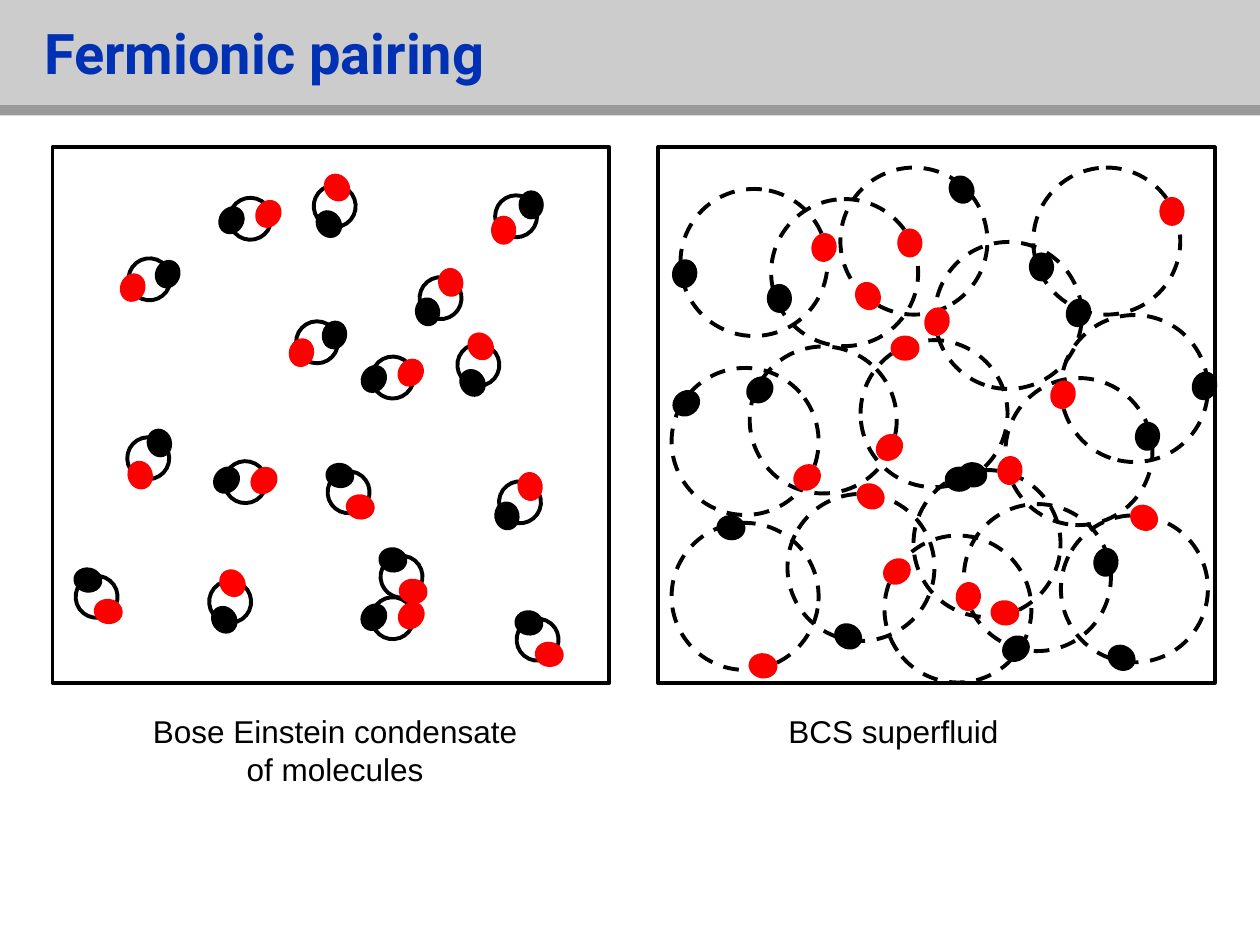
from dataclasses import dataclass
from math import cos, radians, sin

from pptx import Presentation, util as u
from pptx.dml.color import RGBColor
from pptx.enum import dml, shapes, text

COLORS = {"black": "000000", "red": "FF0000", "blue": "0031B5",
          "band": "CCCCCC", "rule": "999999"}
COLUMNS, ROWS = 100, 75
DOT = (2.3, 2)


@dataclass
class PairStyle:
    """Ring diameter and dot offsets from its centre before turning."""
    diameter: float
    red: tuple
    black: tuple
    dashed: bool


MOLECULE = PairStyle(3.33, (-1.1, -1), (0.9, 1.2), False)
COOPER_PAIR = PairStyle(11.67, (-2.3, -5.2), (2, 5.2), True)

# Ring column, ring row, turn in degrees
COOPER_PAIRS = [
    (68.3, 27, 0), (61.2, 15.8, 89.4), (59.5, 27.5, 136.4),
    (53.3, 41.5, 189.4), (66.7, 13.3, 243.8), (76.5, 40, 278.5),
    (74.2, 19.2, 288.9), (70.2, 42.5, 325.4), (53.3, 29.2, 144),
    (54, 15, 101.8), (62.5, 39.2, 31.6), (82, 13.3, 89.4),
    (72.5, 37.3, 189.4), (79.8, 30, 278.5), (84.2, 25, 288.9),
    (84.2, 40.9, 31.6),
]
MOLECULES = [
    (29.5, 47.4, 129.7), (29.5, 28.3, 122.5), (26, 37.4, 189.4),
    (39.3, 15.5, 269.7), (10.2, 20.5, 291.2), (39.6, 38.2, 80.5),
    (17.8, 36.6, 132.9), (23.5, 25.5, 284.1), (30.2, 44.1, 189.4),
    (10.1, 34.7, 253.1), (41, 49.1, 189.4), (6, 45.7, 189.4),
    (36.3, 27.3, 54.8), (18.2, 15.7, 122.5), (33.3, 22, 80.5),
    (24.9, 14.7, 54.8), (16.6, 46.1, 54.8),
]


class SlideBuilder:
    def __init__(self, presentation):
        self.column = presentation.slide_width / COLUMNS
        self.row = presentation.slide_height / ROWS
        self.slide = presentation.slides.add_slide(presentation.slide_layouts[5])

    def place(self, left, top, width, height):
        return (u.Emu(round(left * self.column)), u.Emu(round(top * self.row)),
                u.Emu(round(width * self.column)), u.Emu(round(height * self.row)))

    def shape(self, kind, box, fill=None, line=None, dashed=False, turn=0):
        shape = self.slide.shapes.add_shape(kind, *self.place(*box))
        shape.shadow.inherit = False
        shape.rotation = turn
        if fill:
            shape.fill.solid()
            shape.fill.fore_color.rgb = RGBColor.from_string(COLORS[fill])
        else:
            shape.fill.background()
        if line:
            shape.line.color.rgb = RGBColor.from_string(COLORS[line])
            shape.line.width = u.Pt(2.25)
            if dashed:
                shape.line.dash_style = dml.MSO_LINE.DASH
        else:
            shape.line.fill.background()

    def rectangle(self, *box, **look):
        self.shape(shapes.MSO_SHAPE.RECTANGLE, box, **look)

    def ellipse(self, x, y, width, height, **look):
        """Draw an ellipse centred on x, y."""
        box = (x - width / 2, y - height / 2, width, height)
        self.shape(shapes.MSO_SHAPE.OVAL, box, **look)

    def pair(self, style, left, top, turn):
        """Draw a ring and its two dots, turned about the ring's centre."""
        x, y = left + style.diameter / 2, top + style.diameter / 2
        self.ellipse(x, y, style.diameter, style.diameter,
                     line="black", dashed=style.dashed, turn=turn)
        c, s = cos(radians(turn)), sin(radians(turn))
        for color, (dx, dy) in (("red", style.red), ("black", style.black)):
            self.ellipse(x + dx * c - dy * s, y + dx * s + dy * c, *DOT,
                         fill=color, turn=turn)

    def fill_text(self, frame, words, color, alignment, anchor, **font):
        frame.word_wrap = True
        frame.auto_size = text.MSO_AUTO_SIZE.NONE
        frame.vertical_anchor = anchor
        paragraph = frame.paragraphs[0]
        paragraph.text = words
        paragraph.alignment = alignment
        for name, value in font.items():
            setattr(paragraph.font, name, value)
        paragraph.font.color.rgb = RGBColor.from_string(COLORS[color])

    def title(self, words, *box):
        title = self.slide.shapes.title
        title.left, title.top, title.width, title.height = self.place(*box)
        self.slide.shapes._spTree.append(title._element)  # above the band
        self.fill_text(title.text_frame, words, "blue", text.PP_ALIGN.LEFT,
                       text.MSO_ANCHOR.MIDDLE, name="Roboto", size=u.Pt(32), bold=True)

    def caption(self, words, *box, alignment=text.PP_ALIGN.LEFT):
        caption = self.slide.shapes.add_textbox(*self.place(*box))
        self.fill_text(caption.text_frame, words, "black", alignment,
                       text.MSO_ANCHOR.TOP, name="Arial", size=u.Pt(18))


def main():
    presentation = Presentation()
    presentation.slide_width, presentation.slide_height = u.Inches(10), u.Inches(7.5)
    builder = SlideBuilder(presentation)

    builder.rectangle(0, 7.5, COLUMNS, 1.67, fill="rule")
    builder.rectangle(0, 0, COLUMNS, 8.33, fill="band")
    builder.title("Fermionic pairing", 2.5, 0, 90, 8.33)

    for left in (4.17, 52.2):
        builder.rectangle(left, 11.7, 44.2, 42.5, line="black")
    for style, pairs in ((COOPER_PAIR, COOPER_PAIRS), (MOLECULE, MOLECULES)):
        for left, top, turn in pairs:
            builder.pair(style, left, top, turn)

    builder.caption("Bose Einstein condensate\vof molecules", 6.3, 56, 40.6, 9,
                    alignment=text.PP_ALIGN.CENTER)
    builder.caption("BCS superfluid", 61.6, 56, 24.3, 5)
    presentation.save("out.pptx")


if __name__ == "__main__":
    main()
